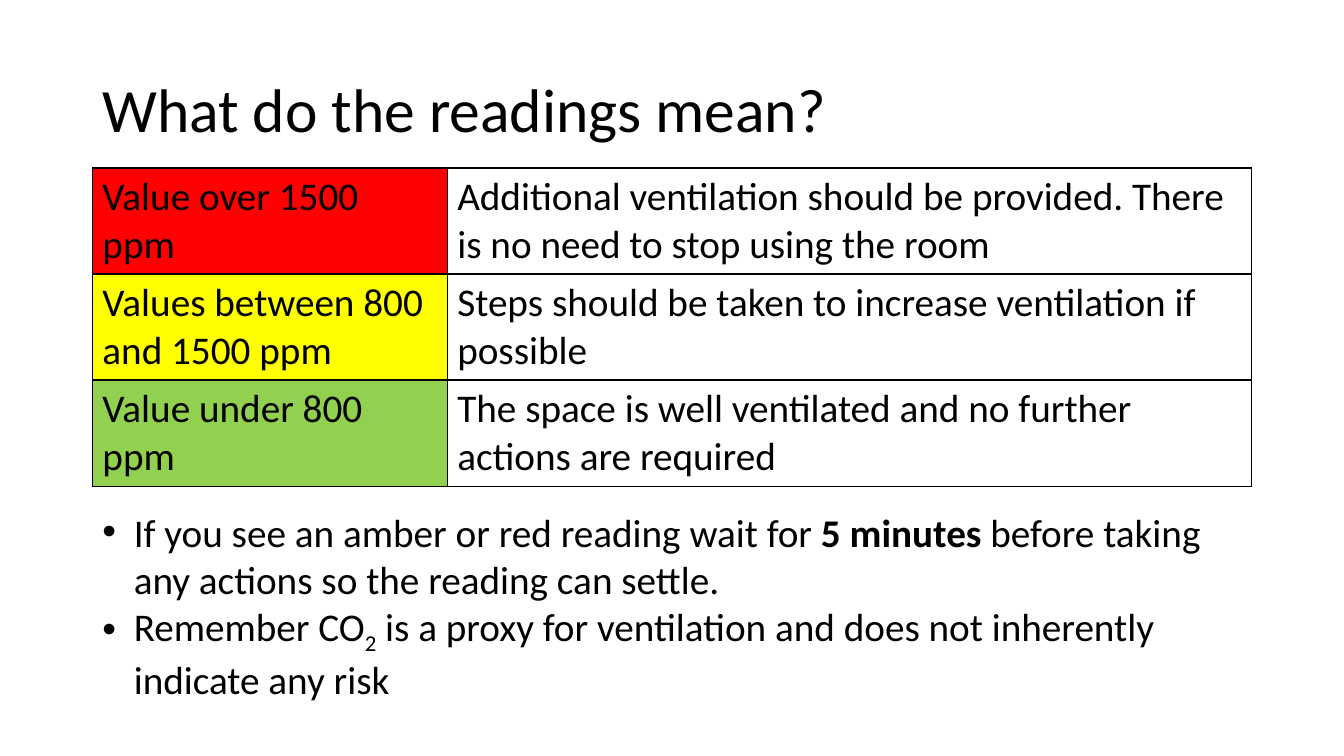
"""Build a slide that explains CO2 monitor readings with a colour-coded table."""
from lxml import etree
from pptx import Presentation
from pptx.dml.color import RGBColor
from pptx.enum.text import MSO_ANCHOR
from pptx.oxml.ns import qn
from pptx.util import Pt

PX = 9525
MIDDLE = MSO_ANCHOR.MIDDLE
COLOURS = {
    "text": "000000",
    "plain": "FFFFFF",
    "high": "FF0000",
    "medium": "FFFF00",
    "low": "92D050",
}
LEFT, WIDTH = 88, 1104
TABLE_TOP, ROW_HEIGHT = 160, 101
COLUMN_WIDTHS = [338, 766]
BULLET_INDENT = 30
BORDER_WIDTH = Pt(1)

READINGS = [
    ("high", "Value over 1500 ppm",
     "Additional ventilation should be provided. There is no need to stop using the room"),
    ("medium", "Values between 800 and 1500 ppm",
     "Steps should be taken to increase ventilation if possible"),
    ("low", "Value under 800 ppm",
     "The space is well ventilated and no further actions are required"),
]
ADVICE = [
    [("If you see an amber or red reading wait for ", None),
     ("5 minutes ", "bold"),
     ("before taking any actions so the reading can settle.", None)],
    [("Remember CO", None),
     ("2", "subscript"),
     (" is a proxy for ventilation and does not inherently indicate any risk", None)],
]


def add_run(paragraph, text, size, style=None):
    run = paragraph.add_run()
    run.text = text
    formats = {"name": "Calibri", "size": Pt(size), "bold": style == "bold"}
    for attribute, value in formats.items():
        setattr(run.font, attribute, value)
    run.font.color.rgb = RGBColor.from_string(COLOURS["text"])
    if style == "subscript":
        run.font._element.set("baseline", "-25000")


def add_text_frame(slide, top, height):
    box = slide.shapes.add_textbox(LEFT * PX, top * PX, WIDTH * PX, height * PX)
    box.text_frame.word_wrap = True
    return box.text_frame


presentation = Presentation()
presentation.slide_width = 1280 * PX
presentation.slide_height = 720 * PX
slide = presentation.slides.add_slide(presentation.slide_layouts[6])

title_frame = add_text_frame(slide, 38, 139)
title_frame.vertical_anchor = MIDDLE
title_frame.paragraphs[0].line_spacing = 0.9
add_run(title_frame.paragraphs[0], "What do the readings mean?", 44)

table = slide.shapes.add_table(
    len(READINGS), len(COLUMN_WIDTHS), LEFT * PX, TABLE_TOP * PX,
    WIDTH * PX, len(READINGS) * ROW_HEIGHT * PX).table
table.first_row = False
table.horz_banding = False
for column, width in zip(table.columns, COLUMN_WIDTHS):
    column.width = width * PX

for row_index, (level, reading, action) in enumerate(READINGS):
    for column_index, (text, colour) in enumerate([(reading, level), (action, "plain")]):
        cell = table.cell(row_index, column_index)
        add_run(cell.text_frame.paragraphs[0], text, 28)
        properties = cell._tc.get_or_add_tcPr()
        for side in ("a:lnL", "a:lnR", "a:lnT", "a:lnB"):
            border = etree.SubElement(properties, qn(side), w=str(BORDER_WIDTH))
            border_fill = etree.SubElement(border, qn("a:solidFill"))
            etree.SubElement(border_fill, qn("a:srgbClr"), val=COLOURS["text"])
        cell.fill.solid()
        cell.fill.fore_color.rgb = RGBColor.from_string(COLOURS[colour])

advice_frame = add_text_frame(slide, 479, 191)
for index, runs in enumerate(ADVICE):
    paragraph = advice_frame.add_paragraph() if index else advice_frame.paragraphs[0]
    properties = paragraph._p.get_or_add_pPr()
    properties.set("marL", str(BULLET_INDENT * PX))
    properties.set("indent", str(-BULLET_INDENT * PX))
    etree.SubElement(properties, qn("a:buFont"), typeface="Arial")
    etree.SubElement(properties, qn("a:buChar"), char="•")
    for text, style in runs:
        add_run(paragraph, text, 28, style)

presentation.save("out.pptx")
